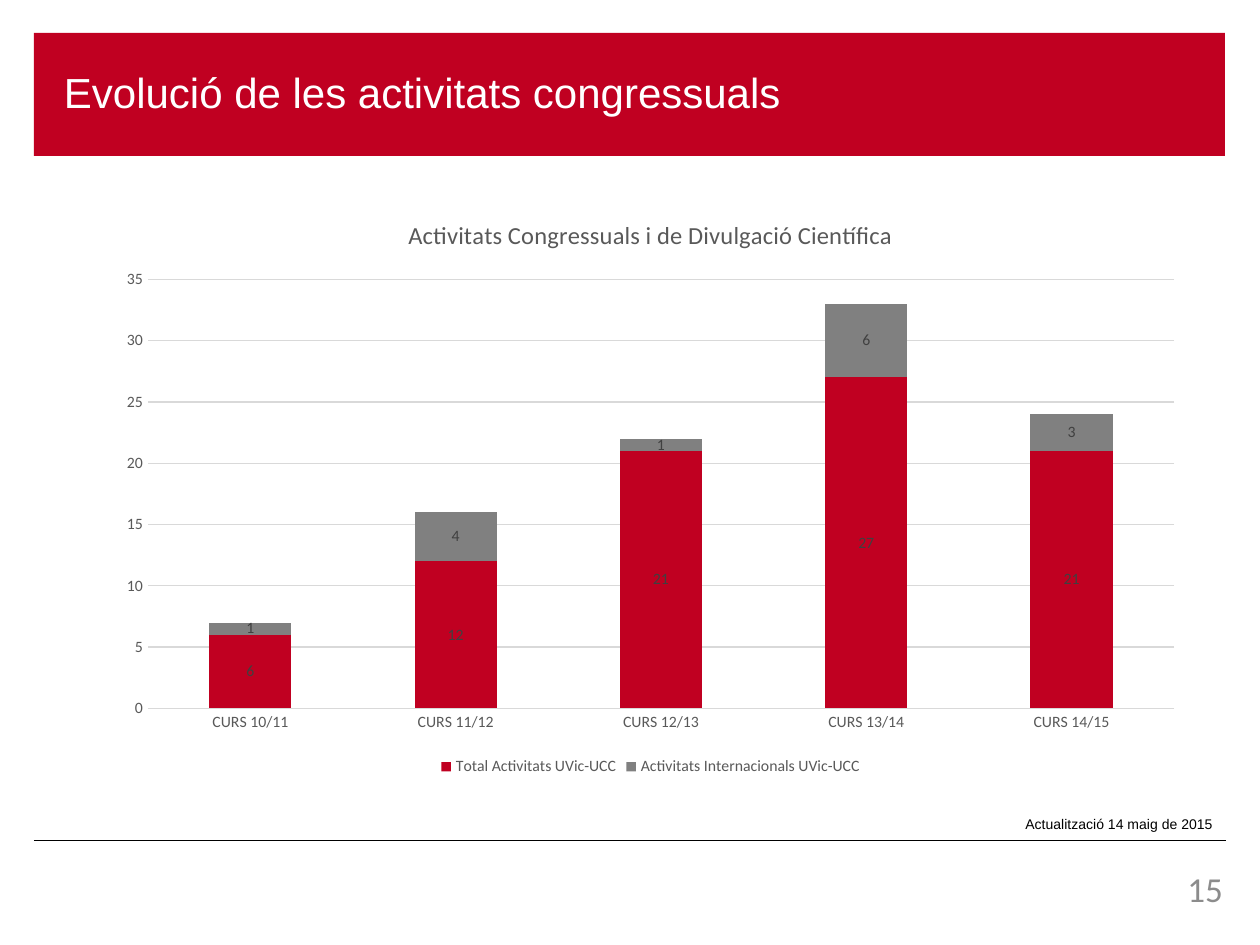
"""Build a slide with a stacked column chart of congress activities per course."""
import pptx
import pptx.chart.data
import pptx.dml.color
import pptx.enum.chart
import pptx.enum.shapes
import pptx.enum.text
import pptx.oxml
import pptx.oxml.ns
import pptx.util

PX = 914400 // 126
COLORS = {
    "red": "C00021", "gray": "808080", "white": "FFFFFF", "black": "000000",
    "number": "8C8C8C", "axis": "595959", "label": "404040", "grid": "D9D9D9",
}
TITLE = "Evolució de les activitats congressuals"
TITLE_BOX = (34, 33, 1191, 123)
RULE = (34, 840, 1226, 840)
CAPTIONS = [
    ("Actualització 14 maig de 2015", (978, 810, 248, 30), "Arial", 8, "black", (13, 6)),
    ("15", (1131, 868, 92, 50), "Calibri", 20, "number", (0, 0)),
]
CHART_BOX = (105, 195, 1091, 586)
CHART_TITLE = "Activitats Congressuals i de Divulgació Científica"
COURSES = ["CURS 10/11", "CURS 11/12", "CURS 12/13", "CURS 13/14", "CURS 14/15"]
SERIES = [
    ("Total Activitats UVic-UCC", [6, 12, 21, 27, 21], "red"),
    ("Activitats Internacionals UVic-UCC", [1, 4, 1, 6, 3], "gray"),
]


def px(lengths):
    return [length * PX for length in lengths]


def rgb(name):
    return pptx.dml.color.RGBColor.from_string(COLORS[name])


def set_font(font, name, size, color):
    font.name = name
    font.size = pptx.util.Pt(size)
    font.bold = False
    font.color.rgb = rgb(color)


def set_line(line, color, width):
    line.color.rgb = rgb(color)
    line.width = pptx.util.Pt(width)


def write(shape, text, font, size, color, align, margins):
    frame = shape.text_frame
    frame.word_wrap = True
    (frame.margin_left, frame.margin_top,
     frame.margin_right, frame.margin_bottom) = px(margins)
    paragraph = frame.paragraphs[0]
    paragraph.text = text
    paragraph.alignment = align
    set_font(paragraph.font, font, size, color)
    return frame


def add_title(slide):
    banner = slide.shapes.add_shape(
        pptx.enum.shapes.MSO_SHAPE.RECTANGLE, *px(TITLE_BOX))
    banner.shadow.inherit = False
    banner.fill.solid()
    banner.fill.fore_color.rgb = rgb("red")
    banner.line.fill.background()
    frame = write(banner, TITLE, "Arial", 24, "white",
                  pptx.enum.text.PP_ALIGN.LEFT, (30, 6, 13, 6))
    frame.vertical_anchor = pptx.enum.text.MSO_ANCHOR.MIDDLE
    frame.paragraphs[0].line_spacing = 0.9


def add_rule(slide):
    rule = slide.shapes.add_connector(
        pptx.enum.shapes.MSO_CONNECTOR.STRAIGHT, *px(RULE))
    set_line(rule.line, "black", 0.5)
    properties = rule._element.spPr
    properties.append(pptx.oxml.parse_xml(
        f"<a:effectLst {pptx.oxml.ns.nsdecls('a')}/>"))


def add_captions(slide):
    for text, box, font, size, color, (side, edge) in CAPTIONS:
        caption = slide.shapes.add_textbox(*px(box))
        write(caption, text, font, size, color,
              pptx.enum.text.PP_ALIGN.RIGHT, (side, edge, side, edge))


def add_activity_chart(slide):
    data = pptx.chart.data.CategoryChartData()
    data.categories = COURSES
    for name, values, _ in SERIES:
        data.add_series(name, values)
    chart = slide.shapes.add_chart(
        pptx.enum.chart.XL_CHART_TYPE.COLUMN_STACKED, *px(CHART_BOX), data).chart
    set_font(chart.font, "Calibri", 10, "black")

    chart.has_title = True
    chart.chart_title.include_in_layout = False
    heading = chart.chart_title.text_frame.paragraphs[0]
    heading.text = CHART_TITLE
    set_font(heading.font, "Calibri", 14, "axis")

    chart.has_legend = True
    chart.legend.position = pptx.enum.chart.XL_LEGEND_POSITION.BOTTOM
    chart.legend.include_in_layout = False
    set_font(chart.legend.font, "Calibri", 9, "axis")

    for axis in (chart.category_axis, chart.value_axis):
        axis.major_tick_mark = pptx.enum.chart.XL_TICK_MARK.NONE
        axis.minor_tick_mark = pptx.enum.chart.XL_TICK_MARK.NONE
        set_font(axis.tick_labels.font, "Calibri", 9, "axis")
    set_line(chart.category_axis.format.line, "grid", 0.75)
    chart.value_axis.format.line.fill.background()
    set_line(chart.value_axis.major_gridlines.format.line, "grid", 0.75)

    plot = chart.plots[0]
    plot.gap_width = 150
    plot.overlap = 100
    plot.vary_by_categories = False
    for series, (_, _, color) in zip(plot.series, SERIES):
        series.format.fill.solid()
        series.format.fill.fore_color.rgb = rgb(color)
        series.invert_if_negative = False
        labels = series.data_labels
        labels.show_value = True
        labels.position = pptx.enum.chart.XL_LABEL_POSITION.CENTER
        set_font(labels.font, "Calibri", 9, "label")


def main():
    presentation = pptx.Presentation()
    presentation.slide_width, presentation.slide_height = px((1260, 945))
    slide = presentation.slides.add_slide(presentation.slide_layouts[6])
    add_rule(slide)
    add_title(slide)
    add_captions(slide)
    add_activity_chart(slide)
    presentation.save("out.pptx")


if __name__ == "__main__":
    main()
